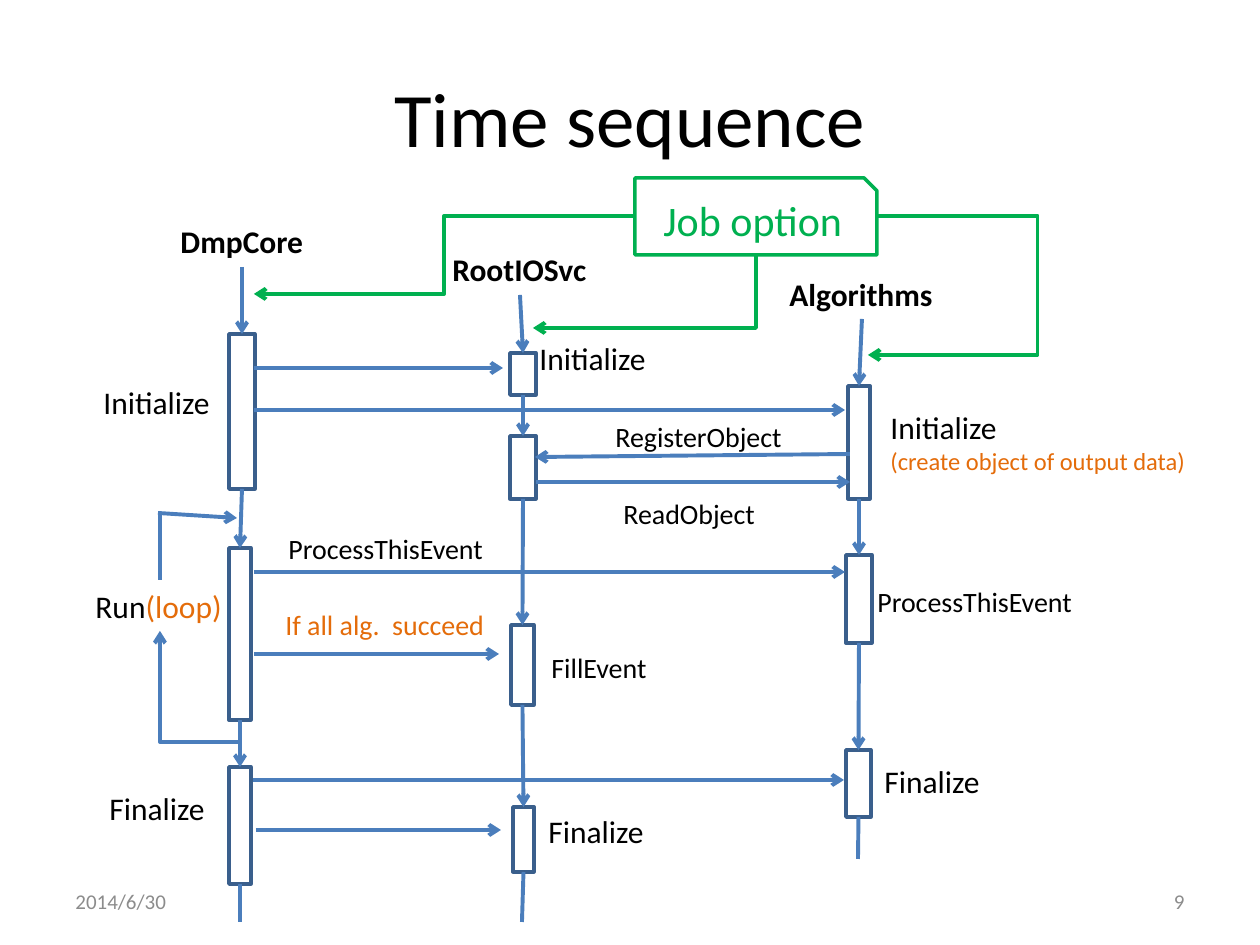
from lxml import etree
from pptx import Presentation, util as u
from pptx.dml.color import RGBColor
from pptx.enum import shapes, text
from pptx.oxml.ns import qn

SCALE = 914400 / 126
FONT = "Calibri"
COLORS = {"ink": "000000", "grey": "8C8C8C", "orange": "E46C0A",
          "green": "00B050", "flow": "4B7EBC", "bar": "3A5F8C"}

LANES = [
    ((242, 267), [(229, 334, 26, 155), (229, 548, 22, 172), (229, 767, 22, 117)], (240, 922)),
    ((520, 295), [(510, 353, 26, 42), (510, 436, 26, 63), (511, 625, 23, 80),
                  (513, 807, 21, 65)], (522, 922)),
    ((862, 319), [(848, 386, 22, 113), (846, 555, 26, 88), (846, 750, 25, 67)], (858, 859)),
]

MESSAGES = [
    ((254, 368), (503, 368)), ((254, 410), (845, 410)),
    ((850, 454), (535, 457)), ((536, 482), (850, 482)),
    ((254, 572), (845, 572)), ((254, 654), (499, 654)),
    ((253, 780), (844, 780)), ((256, 830), (501, 830)),
    ((158, 513), (237, 518)),
]

HEADINGS = [("DmpCore", 168, 216, 156), ("RootIOSvc", 440, 244, 164),
            ("Algorithms", 777, 269, 174)]

STEPS = [("Initialize", 91, 377, 134), ("Finalize", 97, 783, 122),
         ("Initialize", 527, 333, 134), ("Finalize", 536, 806, 122),
         ("Finalize", 872, 756, 122)]

CALLS = [("RegisterObject", 603, 413, 194, "ink"), ("ReadObject", 611, 490, 159, "ink"),
         ("ProcessThisEvent", 276, 525, 223, "ink"),
         ("ProcessThisEvent", 865, 578, 231, "ink"),
         ("FillEvent", 539, 644, 122, "ink"),
         ("If all alg.  succeed", 273, 601, 226, "orange")]


def px(*values):
    return [u.Emu(round(value * SCALE)) for value in values]


def color(name):
    return RGBColor.from_string(COLORS[name])


def style_font(font, size, name="ink", bold=None):
    font.name, font.size, font.bold = FONT, u.Pt(size), bold
    font.color.rgb = color(name)


def add_label(page, place, spans, size, name="ink", bold=None):
    box = page.shapes.add_textbox(*px(*place))
    frame = box.text_frame
    frame.word_wrap = False
    frame.auto_size = text.MSO_AUTO_SIZE.SHAPE_TO_FIT_TEXT
    para = frame.paragraphs[0]
    style_font(para.font, size, name, bold)
    for content, tint in spans:
        span = para.add_run()
        span.text = content
        if tint != name:
            span.font.color.rgb = color(tint)
    return frame


def add_footer(page, left, content, align):
    box = page.shapes.add_textbox(*px(left, 876, 294, 50))
    frame = box.text_frame
    frame.word_wrap = True
    frame.vertical_anchor = text.MSO_ANCHOR.MIDDLE
    para = frame.paragraphs[0]
    para.text, para.alignment = content, align
    style_font(para.font, 12, "grey")


def add_outline(page, kind, place, line):
    shape = page.shapes.add_shape(kind, *px(*place))
    shape.shadow.inherit = False
    shape.fill.background()
    shape.line.color.rgb = color(line)
    shape.line.width = u.Pt(2)
    return shape


def add_line(page, start, end, name="flow", arrow=True, kind=shapes.MSO_CONNECTOR.STRAIGHT):
    line = page.shapes.add_connector(kind, *px(*start, *end))
    line.line.color.rgb = color(name)
    line.line.width = u.Pt(2.25)
    if arrow:
        etree.SubElement(line.line._get_or_add_ln(), qn("a:tailEnd"), type="arrow")
    etree.SubElement(line._element.spPr, qn("a:effectLst"))
    return line


def add_elbow(page, start, end, name, bend_x):
    line = add_line(page, start, end, name, kind=shapes.MSO_CONNECTOR.ELBOW)
    ratio = (bend_x - start[0]) / (end[0] - start[0])
    guides = line._element.spPr.find(qn("a:prstGeom")).get_or_add_avLst()
    etree.SubElement(guides, qn("a:gd"), name="adj1", fmla=f"val {round(ratio * 100000)}")


def add_lane(page, top, places, bottom):
    previous = None
    for place in places:
        bar = add_outline(page, shapes.MSO_SHAPE.RECTANGLE, place, "bar")
        line = add_line(page, top, place[:2])
        if previous is not None:
            line.begin_connect(previous, 2)
        line.end_connect(bar, 0)
        previous = bar
    add_line(page, top, bottom, arrow=False).begin_connect(previous, 2)


def add_job_option(page):
    card = add_outline(page, shapes.MSO_SHAPE.SNIP_1_RECTANGLE, (635, 178, 242, 77), "green")
    card.text_frame.vertical_anchor = text.MSO_ANCHOR.MIDDLE
    para = card.text_frame.paragraphs[0]
    para.text, para.alignment = "Job option", text.PP_ALIGN.CENTER
    style_font(para.font, 24, "green")
    add_elbow(page, (635, 216), (254, 294), "green", 444)
    add_elbow(page, (756, 255), (533, 328), "green", 756)
    add_elbow(page, (877, 216), (868, 355), "green", 1038)


def add_title(page):
    title = page.shapes.title
    title.left, title.top, title.width, title.height = px(63, 38, 1134, 158)
    title.text_frame.vertical_anchor = text.MSO_ANCHOR.MIDDLE
    para = title.text_frame.paragraphs[0]
    para.text, para.alignment = "Time sequence", text.PP_ALIGN.CENTER
    style_font(para.font, 44)


def main():
    deck = Presentation()
    deck.slide_width, deck.slide_height = px(1260, 945)
    page = deck.slides.add_slide(deck.slide_layouts[5])
    add_title(page)
    add_footer(page, 63, "2014/6/30", text.PP_ALIGN.LEFT)
    add_footer(page, 903, "9", text.PP_ALIGN.RIGHT)
    for lane in LANES:
        add_lane(page, *lane)
    add_job_option(page)
    for start, end in MESSAGES:
        add_line(page, start, end)
    add_line(page, (160, 513), (160, 580), arrow=False)
    add_elbow(page, (240, 742), (160, 631), "flow", 160)
    for content, left, top, width in HEADINGS:
        add_label(page, (left, top, width, 50), [(content, "ink")], 18, bold=True)
    for content, left, top, width in STEPS:
        add_label(page, (left, top, width, 50), [(content, "ink")], 18)
    for content, left, top, width, name in CALLS:
        add_label(page, (left, top, width, 47), [(content, name)], 16, name)
    add_label(page, (83, 581, 156, 50), [("Run", "ink"), ("(loop)", "orange")], 18)
    frame = add_label(page, (878, 402, 323, 81), [("Initialize", "ink")], 18)
    para = frame.add_paragraph()
    para.text = "(create object of output data)"
    style_font(para.font, 14, "orange")
    deck.save("out.pptx")


if __name__ == "__main__":
    main()
